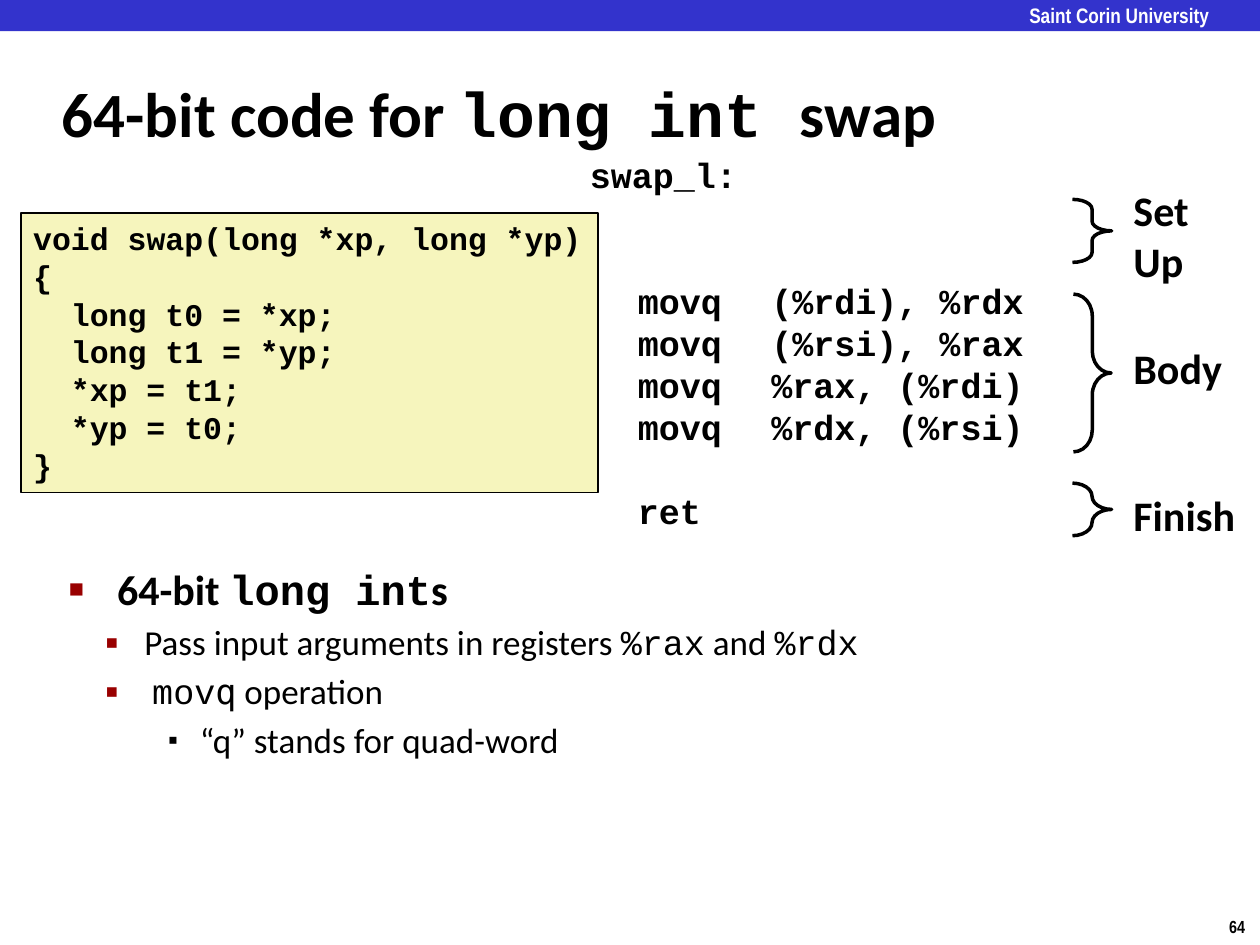
from lxml.etree import SubElement
from pptx import Presentation
from pptx.dml.color import RGBColor
from pptx.enum.shapes import MSO_SHAPE as Preset
from pptx.enum.text import MSO_ANCHOR as Anchor, PP_ALIGN as Align
from pptx.oxml.ns import qn
from pptx.util import Cm, Pt

BLACK = RGBColor(0x00, 0x00, 0x00)
WHITE = RGBColor(0xFF, 0xFF, 0xFF)
BANNER_BLUE = RGBColor(0x33, 0x33, 0xCC)
CODE_YELLOW = RGBColor(0xF6, 0xF5, 0xBD)
BULLET_RED = RGBColor(0x99, 0x00, 0x00)
SANS, MONO, NARROW = "Calibri", "Courier New", "Arial Narrow"


def add_run(paragraph, text, size, font=SANS, bold=True, color=BLACK):
    """Append one formatted run to a paragraph."""
    run = paragraph.add_run()
    run.text = text
    run.font.name = font
    run.font.size = Pt(size)
    run.font.bold = bold
    run.font.color.rgb = color


def next_paragraph(frame, index):
    """Return the first paragraph, or a new one for later indexes."""
    paragraph = frame.add_paragraph() if index else frame.paragraphs[0]
    paragraph.alignment = Align.LEFT
    return paragraph


def add_text(slide, box, wrap=True, anchor=Anchor.TOP):
    """Add an empty text box and return its text frame."""
    frame = slide.shapes.add_textbox(*map(Cm, box)).text_frame
    frame.word_wrap = wrap
    frame.vertical_anchor = anchor
    return frame


def add_shape(slide, preset, box, fill=None, line_width=None):
    """Add a preset shape without shadow."""
    shape = slide.shapes.add_shape(preset, *map(Cm, box))
    shape.shadow.inherit = False
    if fill is None:
        shape.fill.background()
    else:
        shape.fill.solid()
        shape.fill.fore_color.rgb = fill
    if line_width is None:
        shape.line.fill.background()
    else:
        shape.line.color.rgb = BLACK
        shape.line.width = Pt(line_width)
    return shape


def set_margin(paragraph, margin, indent=0):
    """Set the left margin and first-line indent in centimetres."""
    properties = paragraph._p.get_or_add_pPr()
    properties.set("marL", str(Cm(margin)))
    properties.set("indent", str(Cm(indent)))
    return properties


def set_bullet(paragraph, margin, indent, character, color, percent):
    """Give a paragraph a hanging bullet."""
    properties = set_margin(paragraph, margin, indent)
    bullet_color = SubElement(properties, qn("a:buClr"))
    SubElement(bullet_color, qn("a:srgbClr"), val=str(color))
    SubElement(properties, qn("a:buSzPct"), val=str(percent * 1000))
    SubElement(properties, qn("a:buFont"), typeface="Arial")
    SubElement(properties, qn("a:buChar"), char=character)


def set_tabs(paragraph, positions):
    """Set left tab stops in centimetres."""
    tabs = SubElement(paragraph._p.get_or_add_pPr(), qn("a:tabLst"))
    for position in positions:
        SubElement(tabs, qn("a:tab"), pos=str(Cm(position)), algn="l")


def add_banner(slide):
    """Add the top banner and the slide number."""
    add_shape(slide, Preset.RECTANGLE, (0, 0, 25.4, 0.63), BANNER_BLUE)
    frame = add_text(slide, (20.75, 0.05, 4.24, 0.48))
    frame.margin_left = frame.margin_right = 0
    frame.margin_top = frame.margin_bottom = 0
    add_run(next_paragraph(frame, 0), "Saint Corin University", 12, NARROW, color=WHITE)
    number = add_text(slide, (24.53, 18.34, 0.87, 0.69), wrap=False)
    add_run(next_paragraph(number, 0), "64", 10, NARROW)


def add_title(slide):
    """Add the title with its code words."""
    frame = add_text(slide, (1, 1.22, 21.08, 2.1), anchor=Anchor.MIDDLE)
    paragraph = next_paragraph(frame, 0)
    for text, font in (("64-bit code for ", SANS), ("long int ", MONO), ("swap", SANS)):
        add_run(paragraph, text, 36, font)


def add_source_code(slide):
    """Add the C function in its box, with the body indented two characters."""
    box = add_shape(slide, Preset.RECTANGLE, (0.42, 4.29, 11.64, 5.64), CODE_YELLOW, 1)
    frame = box.text_frame
    frame.word_wrap = True
    frame.vertical_anchor = Anchor.TOP
    lines = (
        ("void swap(long *xp, long *yp)", 0),
        ("{", 0),
        ("long t0 = *xp;", 0.76),
        ("long t1 = *yp;", 0.76),
        ("*xp = t1;", 0.76),
        ("*yp = t0;", 0.76),
        ("}", 0),
    )
    for index, (text, margin) in enumerate(lines):
        paragraph = next_paragraph(frame, index)
        set_margin(paragraph, margin)
        add_run(paragraph, text, 18, MONO)


def add_assembly(slide):
    """Add the assembly listing, its parts set apart by spacing."""
    frame = add_text(slide, (11.64, 2.96, 11.64, 7.94))
    lines = (
        ("swap_l:", 0),
        ("\tmovq\t(%rdi), %rdx", 48),
        ("\tmovq\t(%rsi), %rax", 0),
        ("\tmovq\t%rax, (%rdi)", 0),
        ("\tmovq\t%rdx, (%rsi)", 0),
        ("\tret", 24),
    )
    for index, (text, space) in enumerate(lines):
        paragraph = next_paragraph(frame, index)
        paragraph.space_before = Pt(space)
        set_tabs(paragraph, (0.97, 3.66))
        add_run(paragraph, text, 20, MONO)


def add_phase(slide, brace_box, curve, label_box, lines):
    """Add a brace and the name of the code phase it spans."""
    brace = add_shape(slide, Preset.RIGHT_BRACE, brace_box, line_width=2)
    brace.adjustments[0] = curve
    brace.adjustments[1] = 0.5
    frame = add_text(slide, label_box, wrap=False)
    for index, text in enumerate(lines):
        add_run(next_paragraph(frame, index), text, 24)


def add_notes_list(slide):
    """Add the bulleted remarks below the code."""
    frame = add_text(slide, (1.14, 11.23, 21.95, 4.98))
    red_bullet = ("▪", BULLET_RED, 110)
    items = (
        (24, True, (0.97, -0.97, "■", BULLET_RED, 60),
         (("64-bit ", SANS), ("long int", MONO), ("s", SANS))),
        (20, False, (1.52, -0.79, *red_bullet),
         (("Pass input arguments in registers ", SANS), ("%rax", MONO),
          (" and ", SANS), ("%rdx", MONO))),
        (20, False, (1.68, -0.95, *red_bullet),
         (("mov", MONO), ("q", "DejaVu Sans Mono"), (" operation", SANS))),
        (20, False, (2.64, -0.64, "▪", BLACK, 80),
         (("“q” stands for quad-word", SANS),)),
    )
    for index, (size, bold, bullet, runs) in enumerate(items):
        paragraph = next_paragraph(frame, index)
        paragraph.space_before = Pt(size * 0.2)
        set_bullet(paragraph, *bullet)
        for text, font in runs:
            add_run(paragraph, text, size, font, bold)


def main():
    """Build the slide and save it."""
    presentation = Presentation()
    presentation.slide_width, presentation.slide_height = Cm(25.4), Cm(19.05)
    slide = presentation.slides.add_slide(presentation.slide_layouts[6])
    add_banner(slide)
    add_title(slide)
    add_notes_list(slide)
    add_source_code(slide)
    phases = (
        ((21.62, 4.02, 0.79, 1.27), 0.25, (22.6, 3.6, 1.65, 2.31), ("Set", "Up")),
        ((21.64, 5.93, 0.76, 3.18), 0.58, (22.6, 6.78, 2.31, 1.27), ("Body",)),
        ((21.62, 9.74, 0.79, 1.06), 0.36, (22.6, 9.74, 2.59, 1.27), ("Finish",)),
    )
    for phase in phases:
        add_phase(slide, *phase)
    add_assembly(slide)
    presentation.save("out.pptx")


if __name__ == "__main__":
    main()
